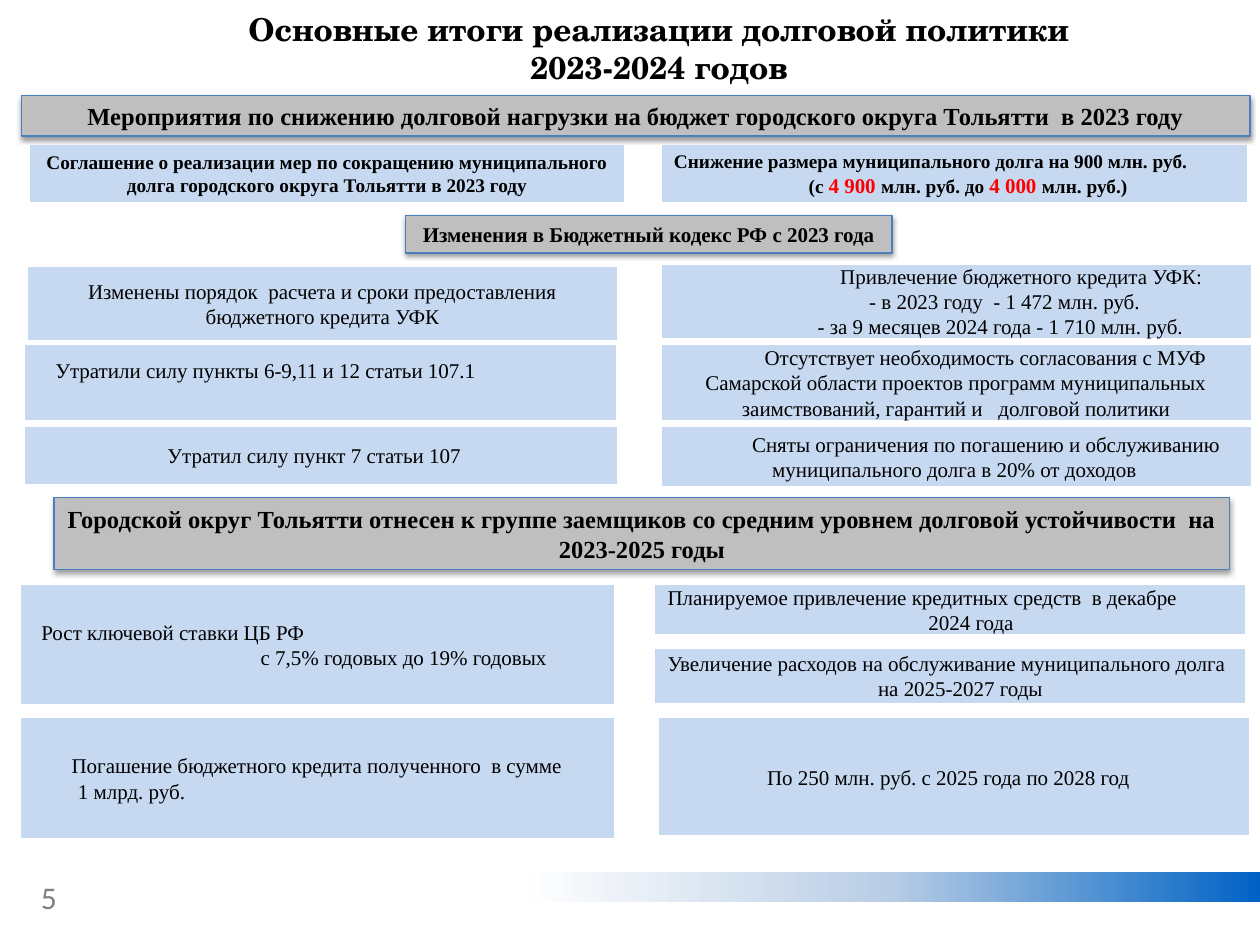
from dataclasses import dataclass

from pptx import Presentation
from pptx.dml.color import RGBColor
from pptx.enum import shapes, text
from pptx.oxml import parse_xml
from pptx.oxml.ns import nsdecls
from pptx.util import Inches, Pt


@dataclass(frozen=True)
class Theme:
    ink: str = "000000"
    accent: str = "FF0000"
    muted: str = "808080"
    bar: str = "BFBFBF"
    bar_line: str = "4B7EBC"
    card: str = "C6D9F1"
    stripe: tuple = ((0, "0062C4"), (50, "B9CDE5"), (100, "FFFFFF"))
    title_font: str = "TeX Gyre Schola"
    body_font: str = "Times New Roman"
    number_font: str = "Calibri"
    title_size: int = 18
    bar_size: int = 14
    body_size: int = 12
    lead_size: int = 11


THEME = Theme()
CENTER = None  # a line without an indent is centred

# Each card: left, top, width, height, then lines of (indent, wording)
CARDS = [
    (0.22, 2.12, 4.68, 0.58, [
        (CENTER, "Изменены порядок  расчета и сроки предоставления бюджетного кредита УФК")]),
    (5.25, 2.1, 4.68, 0.58, [
        (1.32, "Привлечение бюджетного кредита УФК:"),
        (1.55, "- в 2023 году  - 1 472 млн. руб."),
        (1.14, "- за 9 месяцев 2024 года - 1 710 млн. руб.")]),
    (5.25, 2.74, 4.68, 0.59, [
        (0.72, "Отсутствует необходимость согласования с МУФ"),
        (0.25, "Самарской области проектов программ муниципальных"),
        (0.54, "заимствований, гарантий и   долговой политики")]),
    (0.2, 3.39, 4.7, 0.45, [(1.03, "Утратил силу пункт 7 статьи 107")]),
    (5.25, 3.39, 4.68, 0.47, [
        (0.62, "Сняты ограничения по погашению и обслуживанию"),
        (0.78, "муниципального долга в 20% от доходов")]),
    (0.17, 4.64, 4.7, 0.95, [
        (0.06, "Рост ключевой ставки ЦБ РФ"),
        (1.8, "с 7,5% годовых до 19% годовых")]),
    (5.2, 4.64, 4.68, 0.39, [
        (0, "Планируемое привлечение кредитных средств  в декабре"),
        (2.07, "2024 года")]),
    (5.2, 5.15, 4.68, 0.43, [
        (0, "Увеличение расходов на обслуживание муниципального долга"),
        (1.67, "на 2025-2027 годы")]),
    (0.17, 5.7, 4.7, 0.95, [
        (0.3, "Погашение бюджетного кредита полученного  в сумме"),
        (0.35, "1 млрд. руб.")]),
    (5.23, 5.7, 4.68, 0.93, [(0.76, "По 250 млн. руб. с 2025 года по 2028 год")]),
]

BARS = [
    (0.17, 0.76, 9.75, 0.32, THEME.bar_size,
     "Мероприятия по снижению долговой нагрузки на бюджет городского округа Тольятти  в 2023 году"),
    (3.22, 1.71, 3.86, 0.3, THEME.body_size, "Изменения в Бюджетный кодекс РФ с 2023 года"),
    (0.43, 3.95, 9.33, 0.57, THEME.bar_size,
     "Городской округ Тольятти отнесен к группе заемщиков со средним уровнем "
     "долговой устойчивости  на 2023-2025 годы"),
]


def rgb(value):
    return RGBColor.from_string(value)


def add_run(paragraph, wording, size, bold=False, color=THEME.ink, font=THEME.body_font):
    run = paragraph.add_run()
    run.text = wording
    run.font.size = Pt(size)
    run.font.bold = bold
    run.font.name = font
    run.font.color.rgb = rgb(color)


def add_line(frame, indent=CENTER):
    """Return the next paragraph of the frame, indented or centred."""
    first = frame.paragraphs[0]
    paragraph = frame.add_paragraph() if first.runs else first
    if indent is CENTER:
        paragraph.alignment = text.PP_ALIGN.CENTER
    else:
        paragraph.alignment = text.PP_ALIGN.LEFT
        paragraph._p.get_or_add_pPr().set("marL", str(Inches(indent)))
    return paragraph


def add_block(slide, preset, box, fill):
    block = slide.shapes.add_shape(preset, *map(Inches, box))
    block.shadow.inherit = False
    block.fill.solid()
    block.fill.fore_color.rgb = rgb(fill)
    block.line.fill.background()
    block.text_frame.word_wrap = True
    block.text_frame.vertical_anchor = text.MSO_ANCHOR.MIDDLE
    return block


def add_bar(slide, box, size, wording):
    bar = add_block(slide, shapes.MSO_SHAPE.RECTANGLE, box, THEME.bar)
    bar.line.color.rgb = rgb(THEME.bar_line)
    bar.line.width = Pt(0.75)
    effects = bar._element.spPr.find("{*}effectLst")
    effects.append(parse_xml(
        f'<a:outerShdw {nsdecls("a")} blurRad="{Pt(3.1)}" dist="{Pt(1.6)}" '
        'dir="5400000" rotWithShape="0"><a:srgbClr val="000000">'
        '<a:alpha val="38000"/></a:srgbClr></a:outerShdw>'))
    add_run(add_line(bar.text_frame), wording, size, bold=True)


def add_card(slide, box, lines=()):
    card = add_block(slide, shapes.MSO_SHAPE.ACTION_BUTTON_CUSTOM, box, THEME.card)
    for indent, wording in lines:
        add_run(add_line(card.text_frame, indent), wording, THEME.body_size)
    return card.text_frame


def add_lead_cards(slide):
    agreement = add_card(slide, (0.24, 1.15, 4.71, 0.45))
    add_run(add_line(agreement),
            "Соглашение о реализации мер по сокращению муниципального долга "
            "городского округа Тольятти в 2023 году", THEME.lead_size, bold=True)

    reduction = add_card(slide, (5.25, 1.15, 4.65, 0.45))
    add_run(add_line(reduction, 0), "Снижение размера муниципального долга на 900 млн. руб.",
            THEME.lead_size, bold=True)
    amounts = add_line(reduction, 1.07)
    for wording, marked in (("(с ", False), ("4 900 ", True), ("млн. руб. до ", False),
                            ("4 000 ", True), ("млн. руб.)", False)):
        add_run(amounts, wording, THEME.body_size if marked else THEME.lead_size, bold=True,
                color=THEME.accent if marked else THEME.ink)


def add_stripe(slide):
    """Add the footer stripe that fades out to the left."""
    stripe = add_block(slide, shapes.MSO_SHAPE.RECTANGLE, (4.13, 6.92, 5.87, 0.24), THEME.card)
    stops = "".join(f'<a:gs pos="{place * 1000}"><a:srgbClr val="{color}"/></a:gs>'
                    for place, color in THEME.stripe)
    properties = stripe._element.spPr
    properties.replace(properties.find("{*}solidFill"), parse_xml(
        f'<a:gradFill {nsdecls("a")} rotWithShape="1"><a:gsLst>{stops}</a:gsLst>'
        '<a:lin ang="10800000" scaled="0"/></a:gradFill>'))


def set_title(slide, *lines):
    title = slide.shapes.title
    title.left, title.top, title.width, title.height = map(Inches, (0.73, 0, 9, 0.76))
    frame = title.text_frame
    frame.auto_size = text.MSO_AUTO_SIZE.NONE
    frame.vertical_anchor = text.MSO_ANCHOR.MIDDLE
    for wording in lines:
        add_run(add_line(frame), wording, THEME.title_size, bold=True, font=THEME.title_font)


def add_page_number(slide, number):
    frame = slide.shapes.add_textbox(*map(Inches, (0, 6.92, 0.55, 0.4))).text_frame
    frame.word_wrap = True
    paragraph = frame.paragraphs[0]
    paragraph.alignment = text.PP_ALIGN.RIGHT
    add_run(paragraph, number, THEME.title_size, color=THEME.muted, font=THEME.number_font)


def main():
    deck = Presentation()
    deck.slide_width, deck.slide_height = Inches(10), Inches(7.5)
    slide = deck.slides.add_slide(deck.slide_layouts[5])
    set_title(slide, "Основные итоги реализации долговой политики", "2023-2024 годов")
    add_stripe(slide)
    for *box, size, wording in BARS:
        add_bar(slide, box, size, wording)
    add_lead_cards(slide)
    for *box, lines in CARDS:
        add_card(slide, box, lines)
    repealed = add_card(slide, (0.2, 2.74, 4.69, 0.59),
                        [(0.14, "Утратили силу пункты 6-9,11 и 12 статьи 107.1")])
    repealed.margin_bottom = Inches(0.24)  # lifts the line above the middle
    add_page_number(slide, "5")
    deck.save("out.pptx")


if __name__ == "__main__":
    main()
